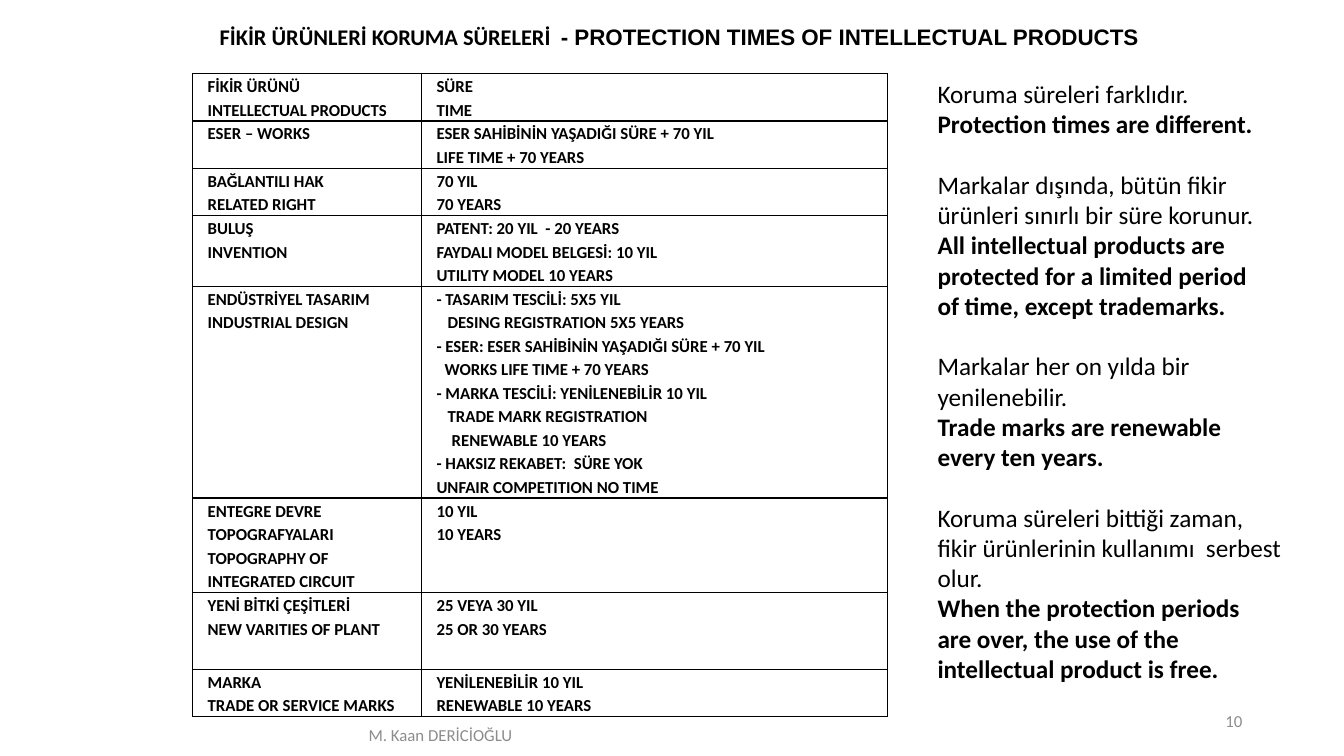
from dataclasses import dataclass

from lxml import etree
from pptx import Presentation
from pptx.dml.color import RGBColor
from pptx.enum.text import MSO_ANCHOR, MSO_AUTO_SIZE, PP_ALIGN
from pptx.oxml.ns import qn
from pptx.util import Emu, Pt

BLACK = RGBColor(0x00, 0x00, 0x00)
GREY = RGBColor(0x8C, 0x8C, 0x8C)
LEFT, CENTER, RIGHT = PP_ALIGN.LEFT, PP_ALIGN.CENTER, PP_ALIGN.RIGHT
TOP, MIDDLE = MSO_ANCHOR.TOP, MSO_ANCHOR.MIDDLE
FIT, FIXED = MSO_AUTO_SIZE.SHAPE_TO_FIT_TEXT, MSO_AUTO_SIZE.NONE
SCALE = 9144  # EMU in one px, 100 px to the inch
INDENT = 10


def px(n: int) -> Emu:
    return Emu(n * SCALE)


@dataclass(frozen=True)
class Run:
    text: str
    size: int = 12
    bold: bool = False
    font: str = "Calibri"
    color: RGBColor = BLACK


@dataclass(frozen=True)
class Para:
    runs: tuple[Run, ...]
    align: PP_ALIGN = LEFT
    left: int = 0
    before: float = 0
    space: float = 1.0


@dataclass(frozen=True)
class Box:
    at: tuple[int, int, int, int]
    paras: list[Para]
    anchor: MSO_ANCHOR = MIDDLE
    grow: bool = False


@dataclass(frozen=True)
class Line:
    text: str
    shift: int = 0


@dataclass(frozen=True)
class Row:
    height: int
    product: tuple[Line, ...]
    time: tuple[Line, ...]


def lines(*texts: str) -> tuple[Line, ...]:
    return tuple(Line(text) for text in texts)


ROWS = [
    Row(47, lines("FİKİR ÜRÜNÜ", "INTELLECTUAL PRODUCTS"), lines("SÜRE", "TIME")),
    Row(47, lines("ESER – WORKS"),
        lines("ESER SAHİBİNİN YAŞADIĞI SÜRE + 70 YIL", "LIFE TIME + 70 YEARS")),
    Row(47, lines("BAĞLANTILI HAK", "RELATED RIGHT"), lines("70 YIL", "70 YEARS")),
    Row(70, lines("BULUŞ", "INVENTION"),
        lines("PATENT: 20 YIL  - 20 YEARS", "FAYDALI MODEL BELGESİ: 10 YIL",
              "UTILITY MODEL 10 YEARS")),
    Row(210, lines("ENDÜSTRİYEL TASARIM", "INDUSTRIAL DESIGN"), (
        Line("- TASARIM TESCİLİ: 5X5 YIL"),
        Line("DESING REGISTRATION 5X5 YEARS", 11),
        Line("- ESER: ESER SAHİBİNİN YAŞADIĞI SÜRE + 70 YIL"),
        Line("WORKS LIFE TIME + 70 YEARS", 8),
        Line("- MARKA TESCİLİ: YENİLENEBİLİR 10 YIL"),
        Line("TRADE MARK REGISTRATION", 11),
        Line("RENEWABLE 10 YEARS", 15),
        Line("- HAKSIZ REKABET:  SÜRE YOK"),
        Line("UNFAIR COMPETITION NO TIME"))),
    Row(94, lines("ENTEGRE DEVRE TOPOGRAFYALARI", "TOPOGRAPHY OF INTEGRATED CIRCUIT"),
        lines("10 YIL", "10 YEARS")),
    Row(76, lines("YENİ BİTKİ ÇEŞİTLERİ", "NEW VARITIES OF PLANT"),
        lines("25 VEYA 30 YIL", "25 OR 30 YEARS")),
    Row(47, lines("MARKA", "TRADE OR SERVICE MARKS"),
        lines("YENİLENEBİLİR 10 YIL", "RENEWABLE 10 YEARS")),
]
COLS = (227, 462)

# Side notes: Turkish lines, then English lines
NOTES = [
    (("Koruma süreleri farklıdır.",), ("Protection times are different.",)),
    (("Markalar dışında, bütün fikir", "ürünleri sınırlı bir süre korunur."),
     ("All intellectual products are", "protected for a limited period",
      "of time, except trademarks.")),
    (("Markalar her on yılda bir", "yenilenebilir."),
     ("Trade marks are renewable", "every ten years.")),
    (("Koruma süreleri bittiği zaman,", "fikir ürünlerinin kullanımı  serbest", "olur."),
     ("When the protection periods", "are over, the use of the",
      "intellectual product is free.")),
]


def note_paras() -> list[Para]:
    paras = []
    for turkish, english in NOTES:
        for i, text in enumerate(turkish + english):
            gap = 21.6 if paras and i == 0 else 0
            paras.append(Para((Run(text, 18, i >= len(turkish)),), before=gap))
    return paras


def write(frame, paras: list[Para]) -> None:
    for i, para in enumerate(paras):
        p = frame.paragraphs[0] if i == 0 else frame.add_paragraph()
        p.alignment = para.align
        p.space_before = Pt(para.before)
        p.line_spacing = para.space
        if para.left:
            props = p._p.get_or_add_pPr()
            props.set("marL", str(px(para.left)))
            props.set("indent", "0")
        for run in para.runs:
            r = p.add_run()
            r.text = run.text
            r.font.size = Pt(run.size)
            r.font.bold = run.bold
            r.font.name = run.font
            r.font.color.rgb = run.color


def add_box(slide, box: Box) -> None:
    frame = slide.shapes.add_textbox(*map(px, box.at)).text_frame
    frame.word_wrap = True
    frame.vertical_anchor = box.anchor
    frame.auto_size = FIT if box.grow else FIXED
    write(frame, box.paras)


def add_edges(cell) -> None:
    props = cell._tc.get_or_add_tcPr()
    for i, side in enumerate(("lnL", "lnR", "lnT", "lnB")):
        edge = etree.Element(qn(f"a:{side}"), w=str(Pt(1)))
        fill = etree.SubElement(edge, qn("a:solidFill"))
        etree.SubElement(fill, qn("a:srgbClr"), val=str(BLACK))
        props.insert(i, edge)


def add_grid(slide) -> None:
    high = sum(row.height for row in ROWS)
    table = slide.shapes.add_table(len(ROWS), len(COLS), px(191), px(73),
                                   px(sum(COLS)), px(high)).table
    table.first_row = table.horz_banding = False
    for col, width in zip(table.columns, COLS):
        col.width = px(width)
    for r, row in enumerate(ROWS):
        table.rows[r].height = px(row.height)
        for c, entry in enumerate((row.product, row.time)):
            cell = table.cell(r, c)
            cell.margin_left = cell.margin_right = px(5)
            cell.margin_top = cell.margin_bottom = 0
            cell.fill.background()
            add_edges(cell)
            write(cell.text_frame, [
                Para((Run(line.text, bold=True),), left=INDENT + line.shift, space=1.15)
                for line in entry])


def main() -> None:
    deck = Presentation()
    deck.slide_width, deck.slide_height = px(1333), px(750)
    slide = deck.slides.add_slide(deck.slide_layouts[6])

    # Page number, table, title, side notes, footer
    add_box(slide, Box((942, 695, 300, 40), [Para((Run("10", color=GREY),), RIGHT)]))
    add_grid(slide)
    title = (Run("FİKİR ÜRÜNLERİ KORUMA SÜRELERİ  ", 16, True),
             Run("- PROTECTION TIMES OF INTELLECTUAL PRODUCTS", 16, True, "Arial"))
    add_box(slide, Box((208, 18, 984, 37), [Para(title)], grow=True))
    add_box(slide, Box((920, 73, 408, 616), note_paras(), TOP, True))
    author = Run("M. Kaan DERİCİOĞLU", color=GREY)
    add_box(slide, Box((287, 709, 300, 40), [Para((author,), CENTER)]))

    deck.save("out.pptx")


if __name__ == "__main__":
    main()
